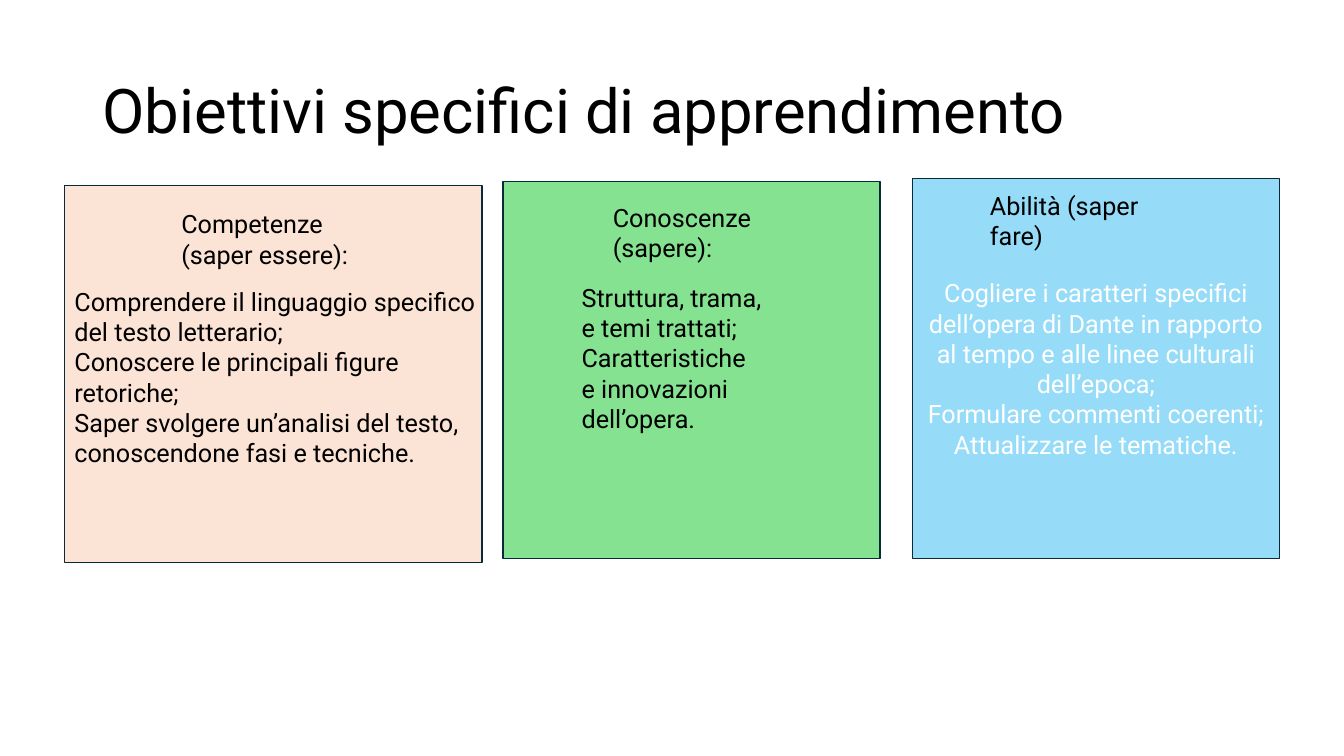
from pptx import Presentation
from pptx.dml.color import RGBColor
from pptx.enum.shapes import MSO_SHAPE
from pptx.enum.text import MSO_ANCHOR, PP_ALIGN
from pptx.util import Inches, Pt

COLORS = {
    "text": "000000",
    "light": "FFFFFF",
    "outline": "092A39",
    "peach": "FBE3D6",
    "green": "84E291",
    "sky": "96DCF8",
}

deck = Presentation()
deck.slide_width, deck.slide_height = Inches(13.33), Inches(7.5)
slide = deck.slides.add_slide(deck.slide_layouts[6])


def write(text, box=None, target=None, size=18, color="text", align=PP_ALIGN.LEFT,
          anchor=MSO_ANCHOR.TOP, spacing=1.0):
    holder = target or slide.shapes.add_textbox(*map(Inches, box))
    frame = holder.text_frame
    frame.word_wrap = True
    frame.vertical_anchor = anchor
    for index, line in enumerate(text.split("\n")):
        paragraph = frame.paragraphs[0] if index == 0 else frame.add_paragraph()
        paragraph.alignment = align
        paragraph.line_spacing = spacing
        run = paragraph.add_run()
        run.text = line
        run.font.name = "Roboto"
        run.font.size = Pt(size)
        run.font.color.rgb = RGBColor.from_string(COLORS[color])


write("Obiettivi specifici di apprendimento", box=(0.92, 0.4, 11.5, 1.45),
      size=44, anchor=MSO_ANCHOR.MIDDLE, spacing=0.9)

competenze = (
    "Comprendere il linguaggio specifico del testo letterario;\n"
    "Conoscere le principali figure retoriche;\n"
    "Saper svolgere un’analisi del testo, conoscendone fasi e tecniche."
)
conoscenze = (
    "Struttura, trama, e temi trattati;\n"
    "Caratteristiche e innovazioni dell’opera."
)
abilita = (
    "Cogliere i caratteri specifici dell’opera di Dante in rapporto "
    "al tempo e alle linee culturali dell’epoca;\n"
    "Formulare commenti coerenti;\n"
    "Attualizzare le tematiche."
)

columns = [
    ("peach", (0.64, 1.84, 4.14, 3.74), "Competenze (saper essere):", (1.7, 2.02),
     competenze, (0.64, 2.79, 4.27, 1.92)),
    ("green", (4.99, 1.8, 3.74, 3.74), "Conoscenze (sapere):", (5.98, 1.96),
     conoscenze, (5.67, 2.75, 2, 1.62)),
    ("sky", (9.05, 1.77, 3.64, 3.77), "Abilità (saper fare)", (9.72, 1.84),
     abilita, None),
]

for fill, panel_box, heading, heading_corner, goals, goals_box in columns:
    panel = slide.shapes.add_shape(MSO_SHAPE.RECTANGLE, *map(Inches, panel_box))
    panel.shadow.inherit = False
    panel.fill.solid()
    panel.fill.fore_color.rgb = RGBColor.from_string(COLORS[fill])
    panel.line.color.rgb = RGBColor.from_string(COLORS["outline"])
    panel.line.width = Pt(1)
    if goals_box:
        write(goals, box=goals_box)
    else:
        write(goals, target=panel, color="light", align=PP_ALIGN.CENTER,
              anchor=MSO_ANCHOR.MIDDLE)
    write(heading, box=(*heading_corner, 2, 0.71))

deck.save("out.pptx")
